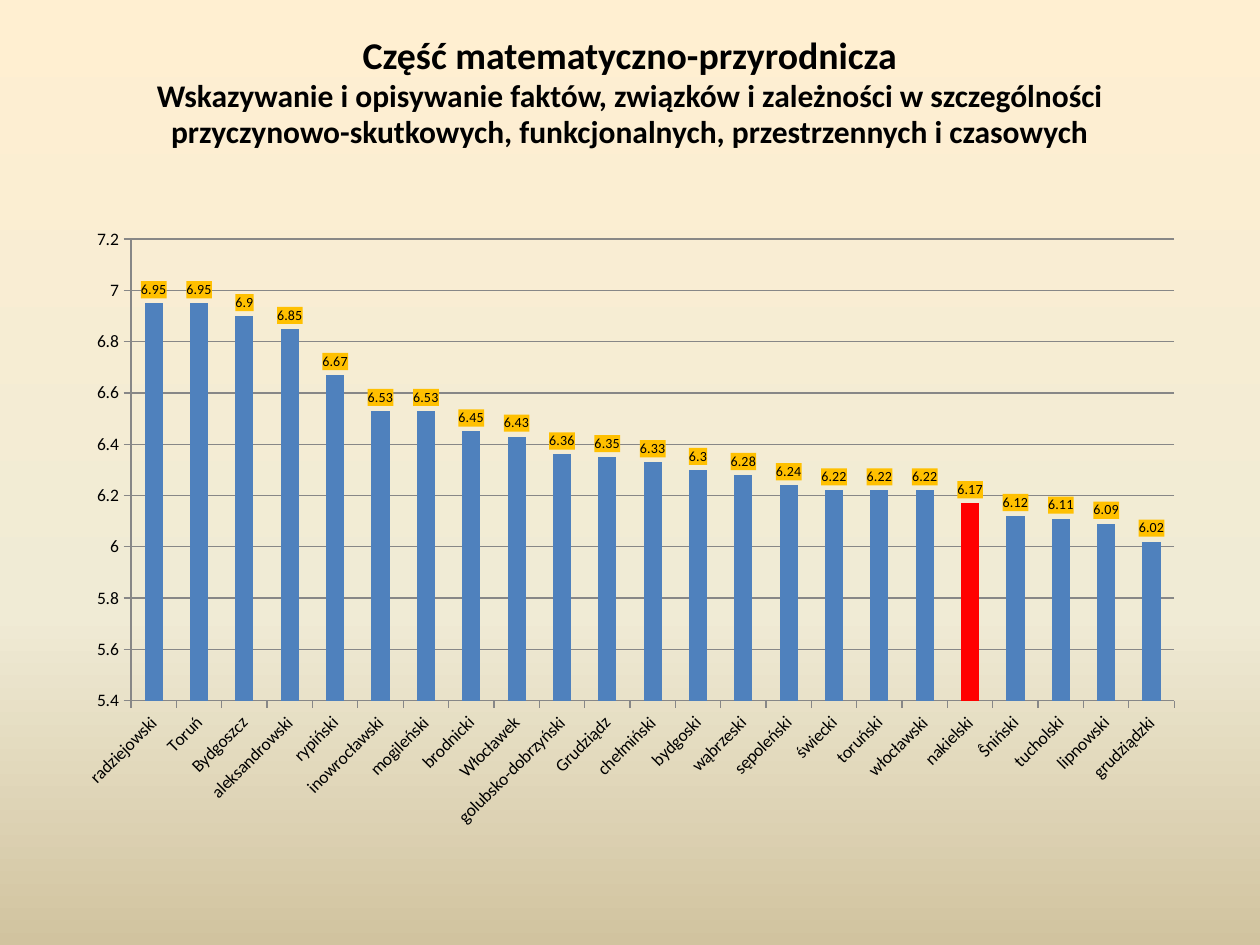
from pptx import Presentation
from pptx.chart.data import CategoryChartData
from pptx.dml.color import RGBColor
from pptx.enum.chart import XL_CHART_TYPE, XL_LABEL_POSITION, XL_TICK_MARK
from pptx.enum.text import MSO_ANCHOR, PP_ALIGN
from pptx.oxml import parse_xml
from pptx.oxml.ns import nsdecls
from pptx.util import Pt

FONT = "Calibri"
BLACK, GRAY, BLUE, RED, AMBER = "000000", "878787", "4F81BD", "FF0000", "FFC000"
HIGHLIGHT = "nakielski"
RESULTS = {
    "radziejowski": 6.95, "Toruń": 6.95, "Bydgoszcz": 6.9,
    "aleksandrowski": 6.85, "rypiński": 6.67, "inowrocławski": 6.53,
    "mogileński": 6.53, "brodnicki": 6.45, "Włocławek": 6.43,
    "golubsko-dobrzyński": 6.36, "Grudziądz": 6.35, "chełmiński": 6.33,
    "bydgoski": 6.3, "wąbrzeski": 6.28, "sępoleński": 6.24,
    "świecki": 6.22, "toruński": 6.22, "włocławski": 6.22,
    "nakielski": 6.17, "Ŝniński": 6.12, "tucholski": 6.11,
    "lipnowski": 6.09, "grudziądzki": 6.02,
}


def rgb(value):
    return RGBColor.from_string(value)


class Deck:
    def __init__(self, prs):
        self.s = prs.slides.add_slide(prs.slide_layouts[6])

    def style(self, font, size, bold=False):
        font.name, font.size, font.bold = FONT, Pt(size), bold
        font.color.rgb = rgb(BLACK)

    def background(self, stops):
        fill = self.s.background.fill
        fill.gradient()
        grad = self.s.background._cSld.bg.bgPr.find(".//{*}gradFill")
        gs = "".join(f'<a:gs pos="{pos * 1000}"><a:srgbClr val="{color}"/></a:gs>'
                     for pos, color in stops)
        grad.getparent().replace(grad, parse_xml(
            f'<a:gradFill {nsdecls("a")} rotWithShape="1"><a:gsLst>{gs}</a:gsLst>'
            '<a:lin ang="5400000" scaled="0"/></a:gradFill>'))

    def text(self, x, y, w, h, lines):
        tf = self.s.shapes.add_textbox(Pt(x), Pt(y), Pt(w), Pt(h)).text_frame
        tf.word_wrap = True
        tf.vertical_anchor = MSO_ANCHOR.TOP
        tf.margin_top = tf.margin_bottom = 0
        for i, (text, size) in enumerate(lines):
            p = tf.add_paragraph() if i else tf.paragraphs[0]
            p.alignment = PP_ALIGN.CENTER
            p.line_spacing = 0.96
            r = p.add_run()
            r.text = text
            self.style(r.font, size, bold=True)

    def column_chart(self, x, y, w, h, values, highlight):
        data = CategoryChartData()
        data.categories = list(values)
        data.add_series("Series 1", list(values.values()))
        chart = self.s.shapes.add_chart(XL_CHART_TYPE.COLUMN_CLUSTERED,
                                        Pt(x), Pt(y), Pt(w), Pt(h), data).chart
        chart.has_legend = chart.has_title = False
        self.style(chart.font, 10)

        # Columns
        plot = chart.plots[0]
        plot.gap_width, plot.vary_by_categories = 150, False
        series = plot.series[0]
        point = series.points[list(values).index(highlight)]
        for item, color in ((series, BLUE), (point, RED)):
            item.format.fill.solid()
            item.format.fill.fore_color.rgb = rgb(color)

        # Value labels on a filled ground
        labels = series.data_labels
        labels.show_value = True
        labels.position = XL_LABEL_POSITION.OUTSIDE_END
        self.style(labels.font, 8)
        labels._element.find("{*}txPr").addprevious(parse_xml(
            f'<c:spPr {nsdecls("c", "a")}><a:solidFill><a:srgbClr val="{AMBER}"/>'
            '</a:solidFill></c:spPr>'))

        # Axes
        val, cat = chart.value_axis, chart.category_axis
        val.minimum_scale, val.maximum_scale, val.major_unit = 5.4, 7.2, 0.2
        val.has_major_gridlines = True
        for axis in (val, cat):
            axis.major_tick_mark = XL_TICK_MARK.OUTSIDE
            self.style(axis.tick_labels.font, 10)
        for part in (val, cat, val.major_gridlines):
            part.format.line.color.rgb = rgb(GRAY)
            part.format.line.width = Pt(0.75)
        cat._element.find("{*}txPr").find("{*}bodyPr").set("rot", "-2700000")

        # Plot area inside the chart frame
        area = chart._chartSpace.find(".//{*}plotArea")
        for old in area.findall("{*}layout"):
            area.remove(old)
        sizes = "".join(f'<c:{k} val="{v}"/>' for k, v in
                        (("x", 0.06), ("y", 0.03), ("w", 0.92), ("h", 0.74)))
        area.insert(0, parse_xml(
            f'<c:layout {nsdecls("c")}><c:manualLayout><c:layoutTarget val="inner"/>'
            f'<c:xMode val="edge"/><c:yMode val="edge"/>{sizes}'
            '</c:manualLayout></c:layout>'))


def main():
    prs = Presentation()
    prs.slide_width, prs.slide_height = Pt(720), Pt(540)
    deck = Deck(prs)
    deck.background([(0, "FFEFD1"), (65, "F0EBD5"), (100, "D1C39F")])

    # Heading
    deck.text(40, 20, 640, 70, [
        ("Część matematyczno-przyrodnicza", 21.6),
        ("Wskazywanie i opisywanie faktów, związków i zależności w szczególności "
         "przyczynowo-skutkowych, funkcjonalnych, przestrzennych i czasowych", 18),
    ])

    # Results by district
    deck.column_chart(36, 126, 648, 356.4, RESULTS, HIGHLIGHT)
    prs.save("out.pptx")


if __name__ == "__main__":
    main()
